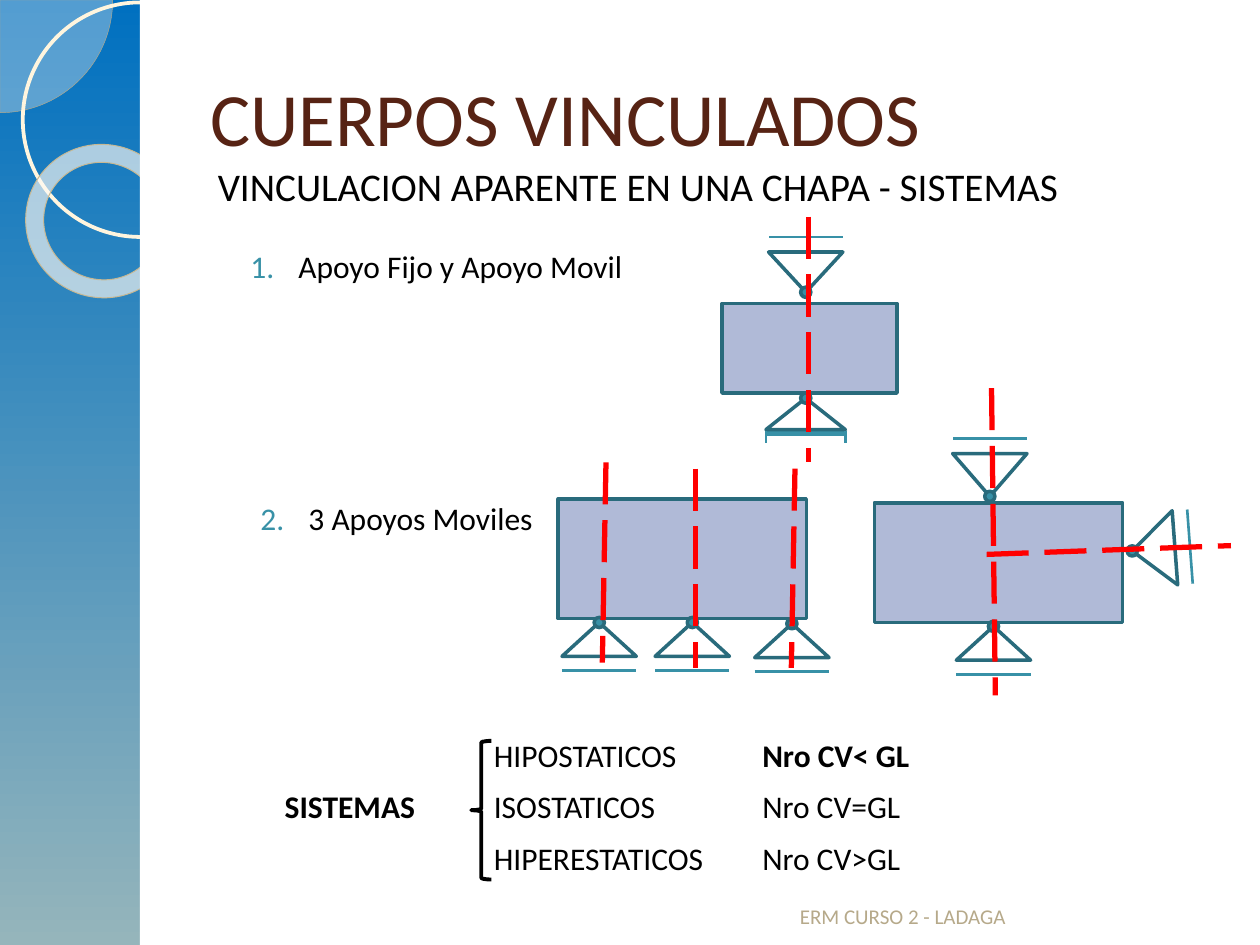
from math import cos, radians, sin

from lxml.etree import SubElement
from pptx import Presentation
from pptx.dml.color import RGBColor
from pptx.enum.dml import MSO_LINE
from pptx.enum.shapes import MSO_CONNECTOR, MSO_SHAPE
from pptx.enum.text import MSO_ANCHOR
from pptx.oxml.ns import qn
from pptx.util import Pt

BLACK = RGBColor(0, 0, 0)
WHITE = RGBColor(255, 255, 255)
RED = RGBColor(255, 0, 0)
BROWN = RGBColor(0x57, 0x23, 0x14)
SAND = RGBColor(0xB6, 0xA9, 0x8A)
RING_EDGE = RGBColor(0xC7, 0xB8, 0x93)
CREAM = RGBColor(0xFF, 0xF5, 0xDE)
IVORY = RGBColor(0xFE, 0xFA, 0xF4)
SKY_TOP = RGBColor(0x00, 0x70, 0xC0)
SKY_BOTTOM = RGBColor(0x95, 0xB5, 0xBB)
TEAL = RGBColor(0x38, 0x91, 0xA7)
DARK_TEAL = RGBColor(0x29, 0x6B, 0x7C)
PLATE_FILL = RGBColor(0xB0, 0xBA, 0xD7)

presentation = Presentation()
presentation.slide_width = Pt(720)
presentation.slide_height = Pt(540)
slide = presentation.slides.add_slide(presentation.slide_layouts[6])

background = slide.background.fill
background.gradient()
background.gradient_angle = 270
for stop, color in zip(background.gradient_stops, (SKY_TOP, SKY_BOTTOM)):
    stop.color.rgb = color


def draw_shape(kind, box, fill=None, line=None, weight=2, rotation=0, opacity=100):
    shape = slide.shapes.add_shape(kind, *[Pt(length) for length in box])
    shape.shadow.inherit = False
    shape.rotation = rotation
    if fill is None:
        shape.fill.background()
    else:
        shape.fill.solid()
        shape.fill.fore_color.rgb = fill
        if opacity < 100:
            color = shape.element.spPr.find(qn("a:solidFill"))[0]
            SubElement(color, qn("a:alpha"), val=str(opacity * 1000))
    if line is None:
        shape.line.fill.background()
    else:
        shape.line.color.rgb = line
        shape.line.width = Pt(weight)
    return shape


def draw_line(ends, color, weight, dash=None):
    connector = slide.shapes.add_connector(
        MSO_CONNECTOR.STRAIGHT, *[Pt(length) for length in ends])
    connector.line.color.rgb = color
    connector.line.width = Pt(weight)
    if dash:
        connector.line.dash_style = dash
    SubElement(connector.element.spPr, qn("a:effectLst"))


quarter = draw_shape(MSO_SHAPE.PIE, (-64.4, -64.4, 128.8, 128.8), IVORY, SAND, 0.25, opacity=33)
quarter.adjustments[0] = 0
quarter.adjustments[1] = 54
draw_shape(MSO_SHAPE.OVAL, (13, 1.4, 134, 134), None, CREAM, 2.15)
ring = draw_shape(MSO_SHAPE.DONUT, (14.4, 82.8, 88.6, 87.1), IVORY, RING_EDGE, 0.58, 38.6, 65)
ring.adjustments[0] = 0.118
draw_shape(MSO_SHAPE.RECTANGLE, (80, 0, 640, 540), WHITE)

texts = [
    ("CUERPOS VINCULADOS", (113, 21.6, 590.4, 90), MSO_ANCHOR.MIDDLE, {},
     {"size": Pt(43), "color": BROWN}, None),
    ("VINCULACION APARENTE EN UNA CHAPA - SISTEMAS", (110.9, 94.3, 590.4, 39.6),
     MSO_ANCHOR.TOP, {"space_before": Pt(6), "line_spacing": 0.8},
     {"size": Pt(22.4), "color": BLACK}, None),
    ("Apoyo Fijo y Apoyo Movil", (105.1, 137.5, 283.7, 47.5), MSO_ANCHOR.TOP,
     {"space_before": Pt(5.5)}, {"size": Pt(18), "color": BLACK}, 1),
    ("3 Apoyos Moviles", (110.9, 281.5, 607, 35.3), MSO_ANCHOR.TOP,
     {"space_before": Pt(5.5)}, {"size": Pt(18), "color": BLACK}, 2),
    ("ERM CURSO 2 - LADAGA", (450, 496.8, 228.2, 37.4), MSO_ANCHOR.BOTTOM, {},
     {"size": Pt(12), "color": SAND}, None),
]
for text, box, anchor, paragraph_format, font_format, number in texts:
    frame = slide.shapes.add_textbox(*[Pt(length) for length in box]).text_frame
    frame.word_wrap = True
    frame.vertical_anchor = anchor
    paragraph = frame.paragraphs[0]
    run = paragraph.add_run()
    run.text = text
    run.font.name = "Calibri"
    run.font.size = font_format["size"]
    run.font.color.rgb = font_format["color"]
    for name, value in paragraph_format.items():
        setattr(paragraph, name, value)
    properties = paragraph._p.get_or_add_pPr()
    if number:
        properties.set("marL", str(Pt(58.3)))
        properties.set("indent", str(Pt(-27.4)))
        bullet_color = SubElement(properties, qn("a:buClr"))
        SubElement(bullet_color, qn("a:srgbClr"), val=str(TEAL))
        SubElement(properties, qn("a:buAutoNum"), type="arabicPeriod", startAt=str(number))
    elif text.startswith("VINCULACION"):
        properties.set("marL", str(Pt(6.5)))

plates = [(412.6, 173.5, 100, 51.1), (319, 285.1, 141.8, 68.4), (499.7, 287.3, 141.8, 68.4)]
for box in plates:
    draw_shape(MSO_SHAPE.RECTANGLE, box, PLATE_FILL, DARK_TEAL)

supports = [
    (460.4, 155.5, 42.5, 23, 180, 8.6, 1.5),
    (460.4, 236.5, 45.4, 18, 0, 1.4, 5),
    (342.4, 365.4, 42.5, 19.4, 0, 8, 1.5),
    (395.6, 365.4, 42.5, 19.4, 0, 8, 1.5),
    (452.5, 366.1, 42.5, 19.4, 0, 8, 1.5),
    (567.7, 367.6, 42.5, 19.4, 0, 8, 1.5),
    (565.6, 271.4, 42.5, 24.5, 180, 8.6, 1.5),
    (659.2, 313.9, 42.5, 24.5, 265.7, 8.6, 1.5),
]
PIN = 5.8
for x, y, width, height, rotation, gap, weight in supports:
    across, down = sin(radians(rotation)), -cos(radians(rotation))
    ground_x = x - across * (height / 2 + gap)
    ground_y = y - down * (height / 2 + gap)
    half_x, half_y = -down * width / 2, across * width / 2
    draw_line((ground_x - half_x, ground_y - half_y, ground_x + half_x, ground_y + half_y),
              TEAL, weight)
    draw_shape(MSO_SHAPE.ISOSCELES_TRIANGLE, (x - width / 2, y - height / 2, width, height),
               WHITE, DARK_TEAL, rotation=rotation)
    pin_x, pin_y = x + across * height / 2, y + down * height / 2
    draw_shape(MSO_SHAPE.OVAL, (pin_x - PIN / 2, pin_y - PIN / 2, PIN, PIN), TEAL, DARK_TEAL)

for x in (437.8, 483.1):
    draw_line((x, 246.2, x, 253.4), TEAL, 1.5)

axes = [
    (462.2, 123.8, 462.2, 264.2),
    (346.3, 264.2, 344.2, 378.7),
    (397.4, 267.8, 397.4, 381.6),
    (454.3, 267.8, 452.2, 381.6),
    (566.6, 221.8, 568.8, 397.4),
    (563.8, 316.8, 703.4, 311.8),
]
for ends in axes:
    draw_line(ends, RED, 3, MSO_LINE.LONG_DASH)

rows = [
    ("", "HIPOSTATICOS", "Nro CV< GL"),
    ("SISTEMAS", "ISOSTATICOS", "Nro CV=GL"),
    ("", "HIPERESTATICOS", "Nro CV>GL"),
]
table = slide.shapes.add_table(3, 3, Pt(155.5), Pt(417.6), Pt(480.2), Pt(88.5)).table
table.first_row = False
table.horz_banding = False
for column, width in zip(table.columns, (119.5, 153.4, 207.3)):
    column.width = Pt(width)
for row_index, row in enumerate(rows):
    table.rows[row_index].height = Pt(29.5)
    for column_index, text in enumerate(row):
        cell = table.cell(row_index, column_index)
        cell.fill.background()
        cell.text = text
        font = cell.text_frame.paragraphs[0].font
        if text:
            font = cell.text_frame.paragraphs[0].runs[0].font
        cell_format = {"name": "Calibri", "size": Pt(18),
                       "bold": text in ("SISTEMAS", "Nro CV< GL")}
        for name, value in cell_format.items():
            setattr(font, name, value)
        font.color.rgb = BLACK

draw_shape(MSO_SHAPE.LEFT_BRACE, (269.3, 423.4, 11.5, 79.2), None, BLACK, 2.25)

presentation.save("out.pptx")
